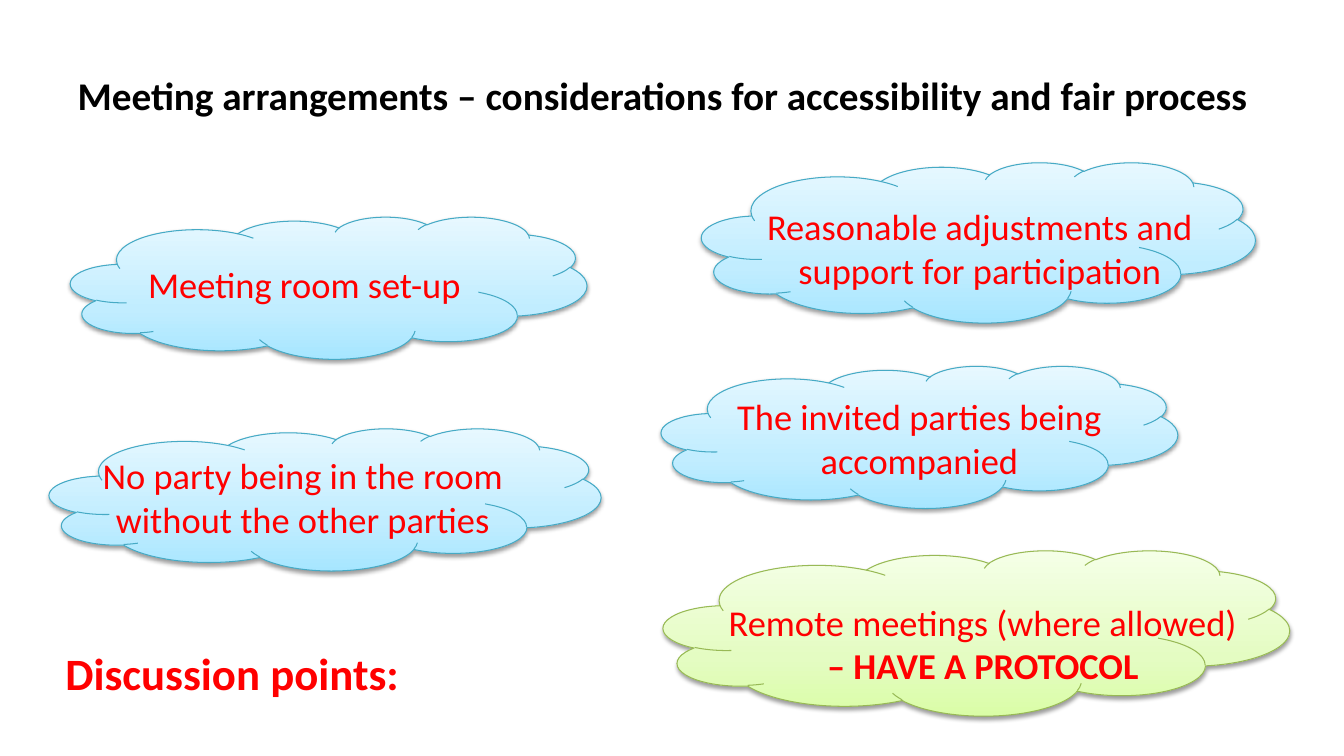
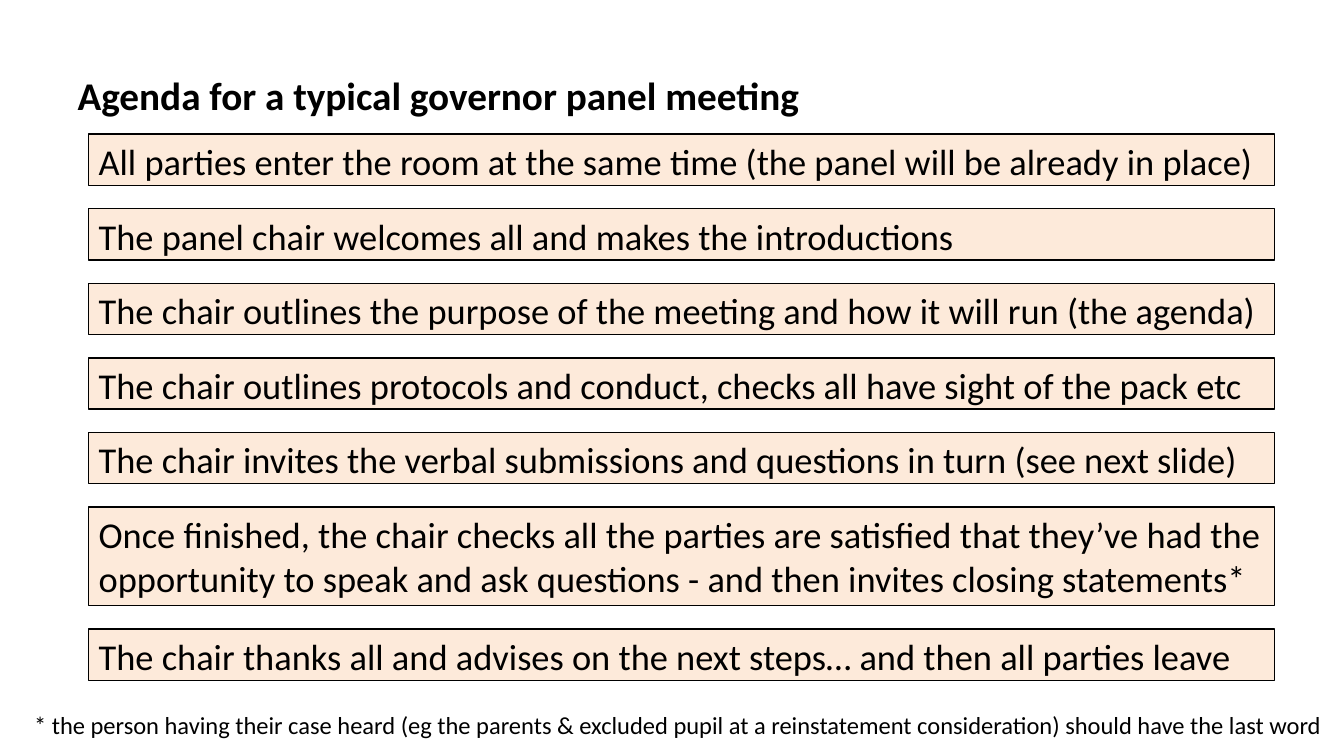
from copy import deepcopy

from lxml.etree import SubElement
from pptx import Presentation
from pptx.dml.color import RGBColor
from pptx.enum.shapes import MSO_SHAPE
from pptx.enum.text import MSO_ANCHOR, PP_ALIGN
from pptx.oxml.ns import qn
from pptx.util import Emu, Inches, Pt

COLORS = {"ink": "000000", "red": "FF0000", "panel": "FDEADA",
          "blue_line": "46AAC5", "green_line": "98B955"}
GRADIENTS = {"blue": ("A7E6FF", "C1EDFF", "E7F8FF"),
             "green": ("DAFDA7", "E4FCC2", "F5FFE7")}
STOPS = (0, 0.35, 1)

TITLE = {"size": 28, "bold": True}
BODY = {"size": 26}
CLOUD_TEXT = {"size": 26, "color": "red"}
HEADING = {"size": 32, "bold": True, "color": "red"}
FOOTNOTE = {"size": 17.5}

LEFT, CENTER = PP_ALIGN.LEFT, PP_ALIGN.CENTER

CLOUDS_TITLE = "Meeting arrangements – considerations for accessibility and fair process"
# Lines as (text, bold), palette, cloud box, text box, alignment
CLOUDS = [
    ([("Meeting room set-up", False)],
     "blue", (0.7, 2.15, 5.12, 1.41), (1.37, 2.55, 5.12, 0.56), LEFT),
    ([("No party being in the room without the other parties", False)],
     "blue", (0.49, 4.25, 5.47, 1.41), (0.9, 4.45, 4.21, 0.96), CENTER),
    ([("Reasonable adjustments and support for participation", False)],
     "blue", (6.96, 1.61, 5.49, 1.59), (7.48, 1.98, 4.48, 0.96), CENTER),
    ([("The invited parties being accompanied", False)],
     "blue", (6.56, 3.63, 5.12, 1.41), (6.77, 3.86, 4.7, 0.96), CENTER),
    ([("Remote meetings (where allowed)", False), ("– HAVE A PROTOCOL", True)],
     "green", (6.58, 5.46, 6.21, 1.64), (6.96, 5.9, 5.58, 0.96), CENTER),
]
DISCUSSION = "Discussion points:"

AGENDA_TITLE = "Agenda for a typical governor panel meeting"
AGENDA = [  # Text and number of lines
    ("All parties enter the room at the same time (the panel will be already in place)", 1),
    ("The panel chair welcomes all and makes the introductions", 1),
    ("The chair outlines the purpose of the meeting and how it will run (the agenda)", 1),
    ("The chair outlines protocols and conduct, checks all have sight of the pack etc", 1),
    ("The chair invites the verbal submissions and questions in turn (see next slide)", 1),
    ("Once finished, the chair checks all the parties are satisfied that they’ve had the "
     "opportunity to speak and ask questions - and then invites closing statements*", 2),
    ("The chair thanks all and advises on the next steps… and then all parties leave", 1),
]
AGENDA_LEFT, AGENDA_TOP, AGENDA_WIDTH, AGENDA_GAP = 0.88, 1.33, 11.76, 0.23
ROW_HEIGHT = {1: 0.51, 2: 0.98}
LAST_WORD = ("* the person having their case heard (eg the parents & excluded pupil at a "
             "reinstatement consideration) should have the last word")


def rgb(name):
    return RGBColor.from_string(COLORS.get(name, name))


def inches(box):
    return [Inches(v) for v in box]


def write(sp, lines, style, align=LEFT, anchor=MSO_ANCHOR.TOP):
    """Write (text, bold) lines as one paragraph with line breaks."""
    tf = sp.text_frame
    tf.word_wrap = True
    tf.vertical_anchor = anchor
    p = tf.paragraphs[0]
    p.alignment = align
    for i, (text, bold) in enumerate(lines):
        if i:
            p.add_line_break()
        r = p.add_run()
        r.text = text
        font = {"name": "Calibri", "size": Pt(style["size"]),
                "bold": bold or style.get("bold", False)}
        for key, value in font.items():
            setattr(r.font, key, value)
        r.font.color.rgb = rgb(style.get("color", "ink"))


def add_text(s, lines, box, style, align=LEFT):
    write(s.shapes.add_textbox(*inches(box)), lines, style, align)


def add_titled_slide(prs, title):
    s = prs.slides.add_slide(prs.slide_layouts[5])
    write(s.shapes.title, [(title, False)], TITLE, anchor=MSO_ANCHOR.MIDDLE)
    return s


def add_panel(s, shape, box, line, width):
    sp = s.shapes.add_shape(shape, *inches(box))
    sp.shadow.inherit = False
    sp.line.color.rgb = rgb(line)
    sp.line.width = Pt(width)
    return sp


def add_cloud(s, box, palette):
    sp = add_panel(s, MSO_SHAPE.CLOUD, box, palette + "_line", 0.75)
    sp.fill.gradient()
    sp.fill.gradient_angle = 90
    props = sp._element.spPr
    stops = props.find(qn("a:gradFill")).find(qn("a:gsLst"))
    stops.append(deepcopy(stops[-1]))
    for stop, position, color in zip(sp.fill.gradient_stops, STOPS, GRADIENTS[palette]):
        stop.position = position
        stop.color.rgb = rgb(color)
    shadow = SubElement(props.find(qn("a:effectLst")), qn("a:outerShdw"),
                        blurRad=str(Pt(3.1)), dist=str(Pt(1.6)),
                        dir="5400000", rotWithShape="0")
    color = SubElement(shadow, qn("a:srgbClr"), val=COLORS["ink"])
    SubElement(color, qn("a:alpha"), val="38000")


def build_clouds(prs):
    s = add_titled_slide(prs, CLOUDS_TITLE)
    for lines, palette, cloud_box, text_box, align in CLOUDS:
        add_cloud(s, cloud_box, palette)
        add_text(s, lines, text_box, CLOUD_TEXT, align)
    add_text(s, [(DISCUSSION, False)], (0.55, 6.36, 4.68, 1.01), HEADING)


def build_agenda(prs):
    s = add_titled_slide(prs, AGENDA_TITLE)
    top = AGENDA_TOP
    for text, line_count in AGENDA:
        height = ROW_HEIGHT[line_count]
        sp = add_panel(s, MSO_SHAPE.RECTANGLE,
                       (AGENDA_LEFT, top, AGENDA_WIDTH, height), "ink", 1)
        sp.fill.solid()
        sp.fill.fore_color.rgb = rgb("panel")
        write(sp, [(text, False)], BODY)
        top += height + AGENDA_GAP
    add_text(s, [(LAST_WORD, False)], (0.24, 6.99, 13.09, 0.4), FOOTNOTE)


def main():
    prs = Presentation()
    prs.slide_width, prs.slide_height = Inches(13.33), Inches(7.5)
    title = prs.slide_layouts[5].placeholders[0]
    title_box = dict(zip(("left", "top", "width", "height"), inches((0.67, 0.36, 12.35, 1.17))))
    for key, value in title_box.items():
        setattr(title, key, Emu(value))
    build_clouds(prs)
    build_agenda(prs)
    prs.save("out.pptx")


if __name__ == "__main__":
    main()
